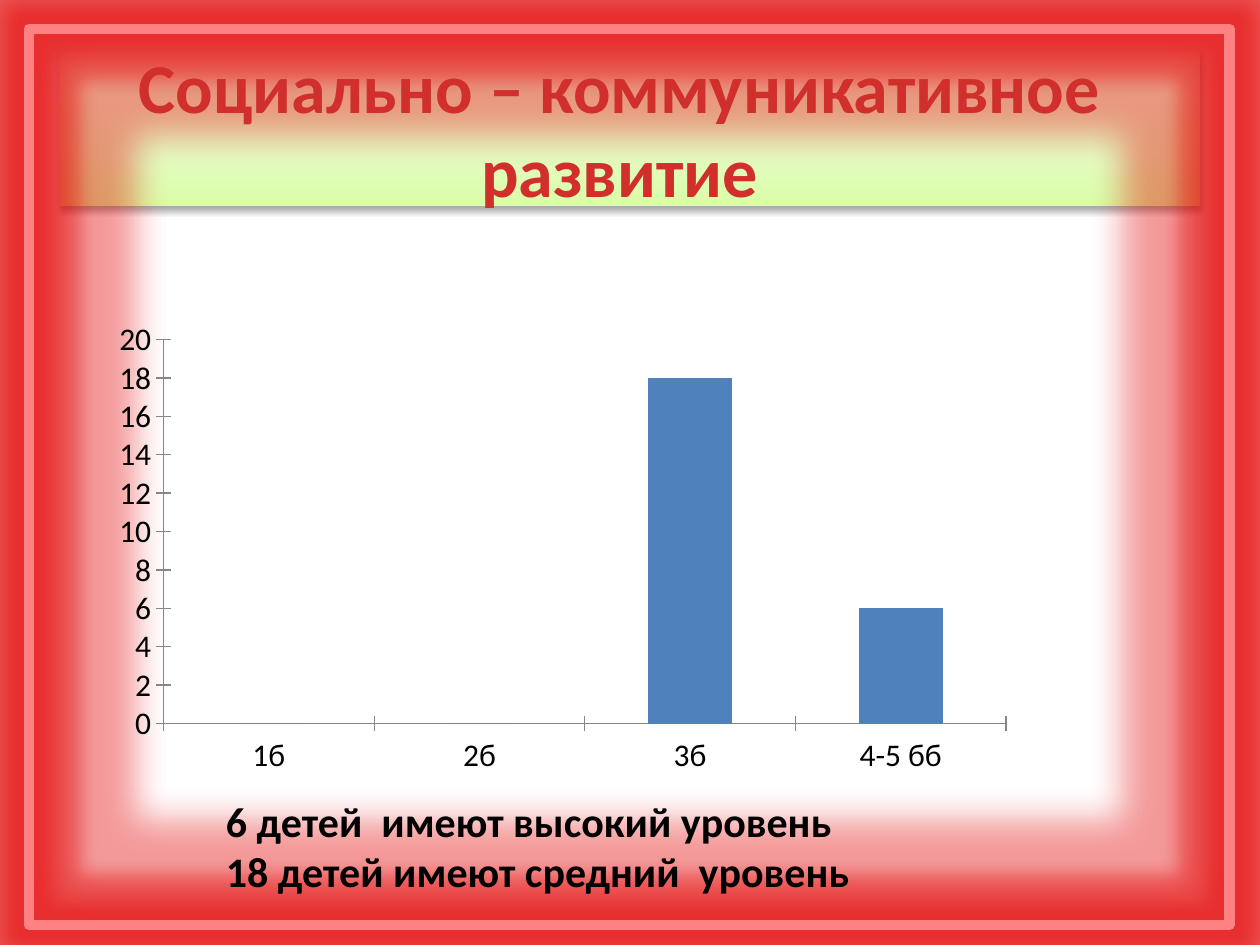
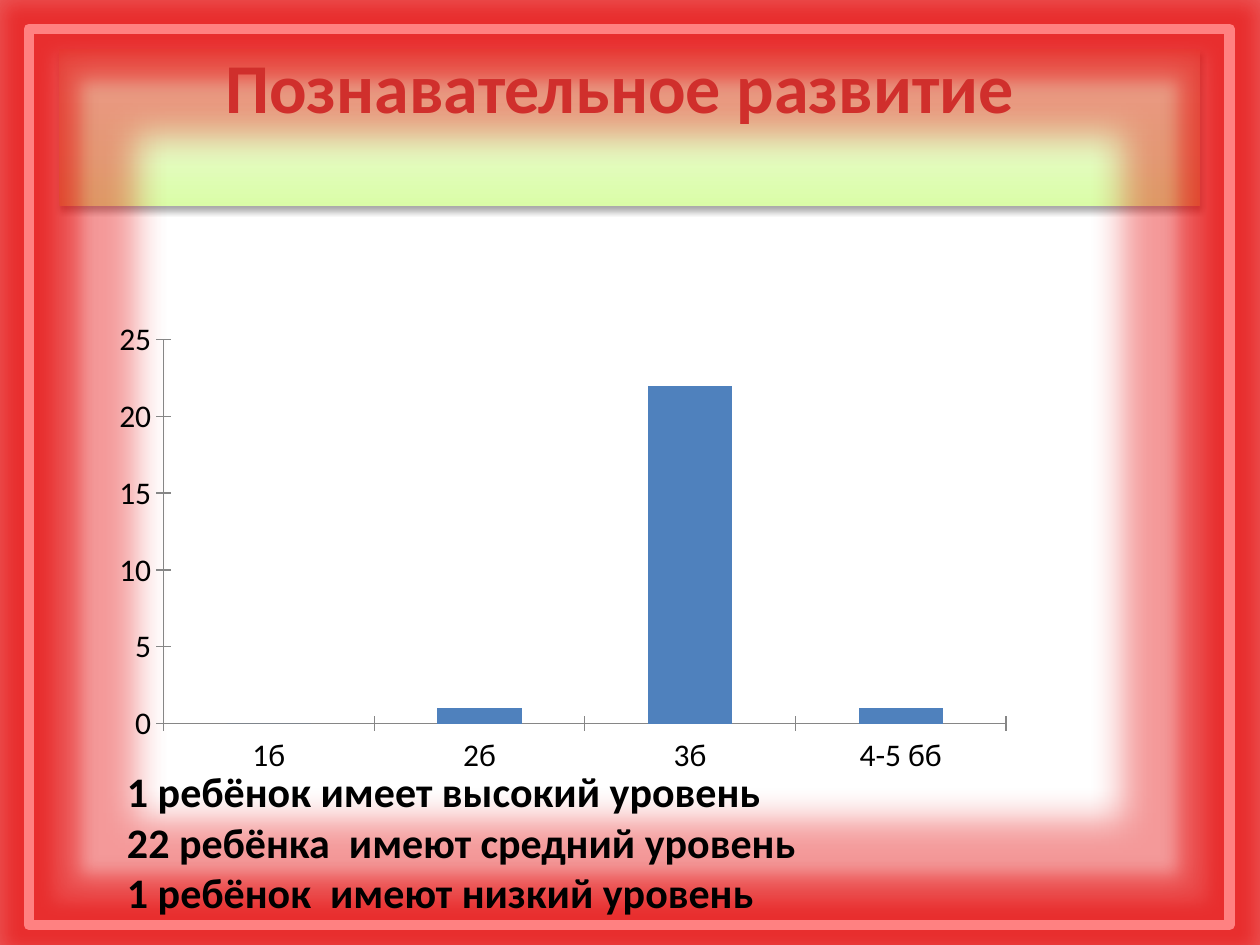
from lxml import etree
from pptx import Presentation
from pptx.chart.data import CategoryChartData
from pptx.dml.color import RGBColor
from pptx.enum.chart import XL_CHART_TYPE, XL_TICK_MARK
from pptx.enum.shapes import MSO_SHAPE
from pptx.enum.text import MSO_ANCHOR, MSO_AUTO_SIZE, PP_ALIGN
from pptx.oxml import parse_xml
from pptx.oxml.ns import nsdecls, qn
from pptx.util import Pt

COLUMN_STACKED = XL_CHART_TYPE.COLUMN_STACKED
TICK_CROSS = XL_TICK_MARK.CROSS
RECTANGLE = MSO_SHAPE.RECTANGLE
TOP = MSO_ANCHOR.TOP
NO_AUTOFIT = MSO_AUTO_SIZE.NONE
CENTER = PP_ALIGN.CENTER

FONT = "Calibri"
BLACK = RGBColor(0x00, 0x00, 0x00)
FRAME_PINK = RGBColor(0xFF, 0x81, 0x81)
GLOW_RED = RGBColor(0xE4, 0x02, 0x02)
BAR_BLUE = RGBColor(0x4F, 0x81, 0xBD)
AXIS_GRAY = RGBColor(0x86, 0x86, 0x86)
BAND_STOPS = [(0, RGBColor(0xDA, 0xFD, 0xA7)), (35, RGBColor(0xE4, 0xFC, 0xC2)),
              (100, RGBColor(0xF5, 0xFF, 0xE7))]
TITLE_STOPS = [(0, RGBColor(0xFC, 0x7C, 0x7A)), (75, RGBColor(0xD0, 0x2F, 0x2C)),
               (100, RGBColor(0xC7, 0x05, 0x00))]

LEVELS = ["1б", "2б", "3б", "4-5 бб"]
PLOT_AREA = {"x": 0.086, "y": 0.176, "w": 0.91, "h": 0.715}
TITLE_LINE = 49
CAPTION_LINE = 29


def gradient(stops, angle):
    """Linear gradient fill element; the angle runs clockwise in degrees."""
    marks = "".join(f'<a:gs pos="{place * 1000}"><a:srgbClr val="{color}"/></a:gs>'
                    for place, color in stops)
    return parse_xml(f'<a:gradFill {nsdecls("a")} rotWithShape="1"><a:gsLst>{marks}</a:gsLst>'
                     f'<a:lin ang="{angle * 60000}" scaled="0"/></a:gradFill>')


def set_effect(shape, tag, color, alpha, **settings):
    """Give the shape a single effect, such as a glow or an outer shadow."""
    shape.shadow.inherit = False
    effects = shape.element.spPr.find(qn("a:effectLst"))
    effect = etree.SubElement(effects, qn(tag))
    for name, value in settings.items():
        effect.set(name, str(value))
    tint = etree.SubElement(effect, qn("a:srgbClr"), val=str(color))
    etree.SubElement(tint, qn("a:alpha"), val=str(alpha * 1000))


class ResultsDeck:
    def __init__(self):
        self.deck = Presentation()
        self.deck.slide_width, self.deck.slide_height = Pt(720), Pt(540)
        self.layout = self.deck.slide_layouts[5]
        self.slide = None

    def new_slide(self):
        self.slide = self.deck.slides.add_slide(self.layout)

    def to_master(self, shape, position):
        """Place a shared shape behind the master's placeholders."""
        self.deck.slide_master.shapes.element.insert(position, shape.element)

    def rectangle(self, left, top, width, height):
        return self.slide.shapes.add_shape(RECTANGLE, Pt(left), Pt(top), Pt(width), Pt(height))

    def band(self):
        band = self.rectangle(34, 28, 652, 90)
        band.line.fill.background()
        band.fill.background()
        properties = band.element.spPr
        properties.replace(properties.find(qn("a:noFill")), gradient(BAND_STOPS, 270))
        set_effect(band, "a:outerShdw", BLACK, 32, blurRad=Pt(3.5), dist=Pt(2.2),
                   dir=90 * 60000, rotWithShape=0)
        self.to_master(band, 2)

    def frame(self, position, glow_radius, glow_alpha):
        frame = self.rectangle(16.5, 16.5, 686, 512)
        frame.fill.background()
        frame.line.color.rgb = FRAME_PINK
        frame.line.width = Pt(6)
        set_effect(frame, "a:glow", GLOW_RED, glow_alpha, rad=Pt(glow_radius))
        self.to_master(frame, position)

    def title(self, text, lines):
        title = self.slide.shapes.title
        title.left, title.top = Pt(48), Pt(21)
        title.width, title.height = Pt(612), Pt(7 + lines * TITLE_LINE)
        frame = title.text_frame
        frame.text = text
        frame.auto_size = NO_AUTOFIT
        frame.vertical_anchor = TOP
        para = frame.paragraphs[0]
        para.alignment = CENTER
        font = para.runs[0].font
        font.name, font.size, font.bold = FONT, Pt(40), True
        font.fill.background()
        properties = para.runs[0].font.fill._xPr
        properties.replace(properties.find(qn("a:noFill")), gradient(TITLE_STOPS, 90))

    def chart(self, counts, top_value, step):
        data = CategoryChartData()
        data.categories = LEVELS
        data.add_series("Series 1", counts)
        chart = self.slide.shapes.add_chart(
            COLUMN_STACKED, Pt(48), Pt(140), Pt(529), Pt(307), data).chart
        chart.has_legend = chart.has_title = False
        chart.font.name, chart.font.size = FONT, Pt(18)
        chart.font.color.rgb = BLACK

        for axis in (chart.category_axis, chart.value_axis):
            axis.has_major_gridlines = False
            axis.major_tick_mark = TICK_CROSS
            axis.format.line.color.rgb = AXIS_GRAY
        chart.value_axis.minimum_scale = 0
        chart.value_axis.maximum_scale = top_value
        chart.value_axis.major_unit = step

        plot = chart.plots[0]
        plot.gap_width, plot.overlap = 150, 100
        plot.vary_by_categories = False
        bars = plot.series[0].format.fill
        bars.solid()
        bars.fore_color.rgb = BAR_BLUE
        self.fix_plot_area(chart)

    def fix_plot_area(self, chart):
        settings = '<c:layoutTarget val="inner"/><c:xMode val="edge"/><c:yMode val="edge"/>'
        settings += "".join(f'<c:{name} val="{value}"/>' for name, value in PLOT_AREA.items())
        area = chart.element.find(".//" + qn("c:plotArea"))
        for previous in area.findall(qn("c:layout")):
            area.remove(previous)
        area.insert(0, parse_xml(f'<c:layout {nsdecls("c")}><c:manualLayout>{settings}'
                                 '</c:manualLayout></c:layout>'))

    def caption(self, lines, left, top, width):
        height = 7 + len(lines) * CAPTION_LINE
        box = self.slide.shapes.add_textbox(Pt(left), Pt(top), Pt(width), Pt(height))
        frame = box.text_frame
        frame.word_wrap = True
        frame.text = "\n".join(lines)
        for para in frame.paragraphs:
            font = para.runs[0].font
            font.name, font.size, font.bold = FONT, Pt(24), True
            font.color.rgb = BLACK


def main():
    results = ResultsDeck()

    # Social and communicative development, with the shared band and frame
    results.new_slide()
    results.band()
    results.frame(3, glow_radius=40, glow_alpha=40)
    results.frame(4, glow_radius=18, glow_alpha=30)
    results.title("Социально – коммуникативное развитие", lines=2)
    results.chart([0, 0, 18, 6], top_value=20, step=2)
    results.caption(["6 детей  имеют высокий уровень",
                     "18 детей имеют средний  уровень"], 122, 451, 430)

    # Cognitive development
    results.new_slide()
    results.title("Познавательное развитие", lines=1)
    results.chart([0, 1, 22, 1], top_value=25, step=5)
    results.caption(["1 ребёнок имеет высокий уровень",
                     "22 ребёнка  имеют средний уровень",
                     "1 ребёнок  имеют низкий уровень"], 65.5, 434, 590)

    results.deck.save("out.pptx")


if __name__ == "__main__":
    main()
